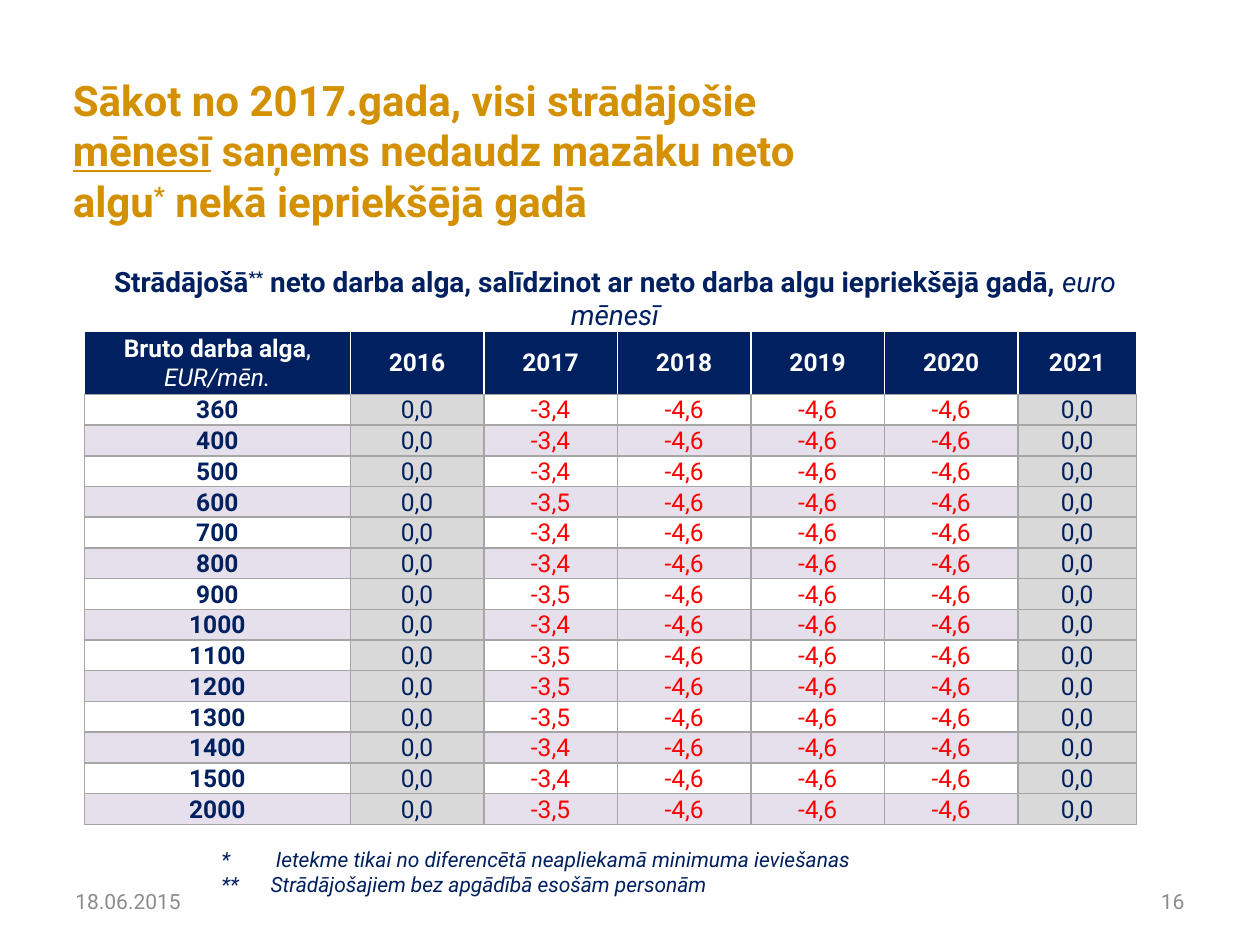
"""Build the slide on monthly net pay compared with the previous year."""
import pptx
import pptx.dml.color
import pptx.enum.text
import pptx.oxml.ns
import pptx.util
from lxml import etree

Inches = pptx.util.Inches
RGBColor = pptx.dml.color.RGBColor
ALIGN = pptx.enum.text.PP_ALIGN
ANCHOR = pptx.enum.text.MSO_ANCHOR
qn = pptx.oxml.ns.qn

FONT = "Roboto"
NAVY = RGBColor(0x00, 0x20, 0x60)
GOLD = RGBColor(0xD3, 0x90, 0x01)
RED = RGBColor(0xFF, 0x00, 0x00)
WHITE = RGBColor(0xFF, 0xFF, 0xFF)
LILAC = RGBColor(0xE6, 0xE0, 0xEC)
PALE_GREY = RGBColor(0xD9, 0xD9, 0xD9)
LINE_GREY = RGBColor(0xA6, 0xA6, 0xA6)
FOOTER_GREY = RGBColor(0x8C, 0x8C, 0x8C)

COLUMN_WIDTHS = [2.11] + [1.06] * 5 + [0.94]
HEADER_HEIGHT, ROW_HEIGHT = 0.5, 0.242
YEARS = ["2016", "2017", "2018", "2019", "2020", "2021"]
FIRST_DROP = {
    "360": "-3,4", "400": "-3,4", "500": "-3,4", "600": "-3,5", "700": "-3,4",
    "800": "-3,4", "900": "-3,5", "1000": "-3,4", "1100": "-3,5", "1200": "-3,5",
    "1300": "-3,5", "1400": "-3,4", "1500": "-3,4", "2000": "-3,5",
}


def add_run(p, text, *, size, color, bold=False, italic=False, underline=False, raised=False):
    r = p.add_run()
    r.text = text
    r.font.name = FONT
    r.font.size = pptx.util.Pt(size)
    r.font.color.rgb = color
    r.font.bold = bold
    r.font.italic = italic
    r.font.underline = underline
    if raised:
        r.font._element.set("baseline", "30000")


def add_text(slide, box, paragraphs, *, align=ALIGN.LEFT, tab=None, fill=None, **style):
    sp = slide.shapes.add_textbox(*map(Inches, box))
    if fill is not None:
        sp.fill.solid()
        sp.fill.fore_color.rgb = fill
    tf = sp.text_frame
    tf.word_wrap = True
    tf.vertical_anchor = ANCHOR.MIDDLE
    for i, runs in enumerate(paragraphs):
        p = tf.add_paragraph() if i else tf.paragraphs[0]
        p.alignment = align
        if tab:
            tabs = etree.SubElement(p._p.get_or_add_pPr(), qn("a:tabLst"))
            etree.SubElement(tabs, qn("a:tab"), pos=str(Inches(tab)), algn="l")
        for text, changes in runs:
            add_run(p, text, **{**style, **changes})


def set_borders(cell, side_color, top_color):
    tcPr = cell._tc.get_or_add_tcPr()
    sides = {"a:lnL": side_color, "a:lnR": side_color, "a:lnT": top_color, "a:lnB": LINE_GREY}
    for i, (tag, color) in enumerate(sides.items()):
        ln = etree.Element(qn(tag), w=str(pptx.util.Pt(1)))
        fill = etree.SubElement(ln, qn("a:solidFill"))
        etree.SubElement(fill, qn("a:srgbClr"), val=str(color))
        tcPr.insert(i, ln)


def fill_cell(cell, runs, *, fill, anchor=ANCHOR.BOTTOM, side=LINE_GREY, top=LINE_GREY, **style):
    cell.fill.solid()
    cell.fill.fore_color.rgb = fill
    cell.vertical_anchor = anchor
    cell.margin_left = cell.margin_right = cell.margin_top = Inches(0.01)
    cell.margin_bottom = 0
    set_borders(cell, side, top)
    p = cell.text_frame.paragraphs[0]
    p.alignment = ALIGN.CENTER
    for text, changes in runs:
        add_run(p, text, **{"size": 14, **style, **changes})


def add_pay_table(slide):
    rows, cols = len(FIRST_DROP) + 1, len(COLUMN_WIDTHS)
    height = HEADER_HEIGHT + ROW_HEIGHT * (rows - 1)
    box = map(Inches, (0.67, 2.63, sum(COLUMN_WIDTHS), height))
    table = slide.shapes.add_table(rows, cols, *box).table
    for column, width in zip(table.columns, COLUMN_WIDTHS):
        column.width = Inches(width)
    for i, row in enumerate(table.rows):
        row.height = Inches(ROW_HEIGHT if i else HEADER_HEIGHT)

    pay_heading = [("Bruto darba alga", {}), (", ", {"bold": False}),
                   ("EUR/mēn.", {"bold": False, "italic": True})]
    for c, runs in enumerate([pay_heading] + [[(year, {})] for year in YEARS]):
        fill_cell(table.cell(0, c), runs, fill=NAVY, anchor=ANCHOR.MIDDLE,
                  side=WHITE, top=WHITE, color=WHITE, bold=True)

    for r, (pay, drop) in enumerate(FIRST_DROP.items(), 1):
        band = WHITE if r % 2 else LILAC
        for c, value in enumerate([pay, "0,0", drop, "-4,6", "-4,6", "-4,6", "0,0"]):
            fill_cell(table.cell(r, c), [(value, {})],
                      fill=PALE_GREY if value == "0,0" else band,
                      color=RED if value.startswith("-") else NAVY, bold=c == 0)


def main():
    prs = pptx.Presentation()
    prs.slide_width, prs.slide_height = Inches(10), Inches(7.5)
    slide = prs.slides.add_slide(prs.slide_layouts[6])

    add_text(slide, (0.5, 6.95, 2.33, 0.4), [[("18.06.2015", {})]], size=12, color=FOOTER_GREY)
    add_text(slide, (7.17, 6.95, 2.33, 0.4), [[("16", {})]], align=ALIGN.RIGHT,
             size=12, color=FOOTER_GREY)
    add_text(slide, (0.48, 0.68, 6.33, 1.02), [[
        ("Sākot no 2017.gada, visi strādājošie ", {}),
        ("mēnesī", {"underline": True}),
        (" saņems nedaudz mazāku neto algu", {}),
        ("*", {"raised": True}),
        (" nekā iepriekšējā gadā", {}),
    ]], fill=WHITE, size=24, color=GOLD, bold=True)
    add_text(slide, (1.66, 6.68, 7.36, 0.47), [
        [("*\t Ietekme tikai no diferencētā neapliekamā minimuma ieviešanas", {})],
        [("**\tStrādājošajiem bez apgādībā esošām personām", {})],
    ], tab=0.39, size=12, color=NAVY, italic=True)
    add_pay_table(slide)
    add_text(slide, (0.59, 2.13, 8.58, 0.47), [[
        ("Strādājošā", {}),
        ("**", {"raised": True}),
        (" neto darba alga, salīdzinot ar neto darba algu iepriekšējā gadā, ", {}),
        ("euro mēnesī", {"bold": False, "italic": True}),
    ]], align=ALIGN.CENTER, size=16, color=NAVY, bold=True)
    prs.save("out.pptx")


if __name__ == "__main__":
    main()
